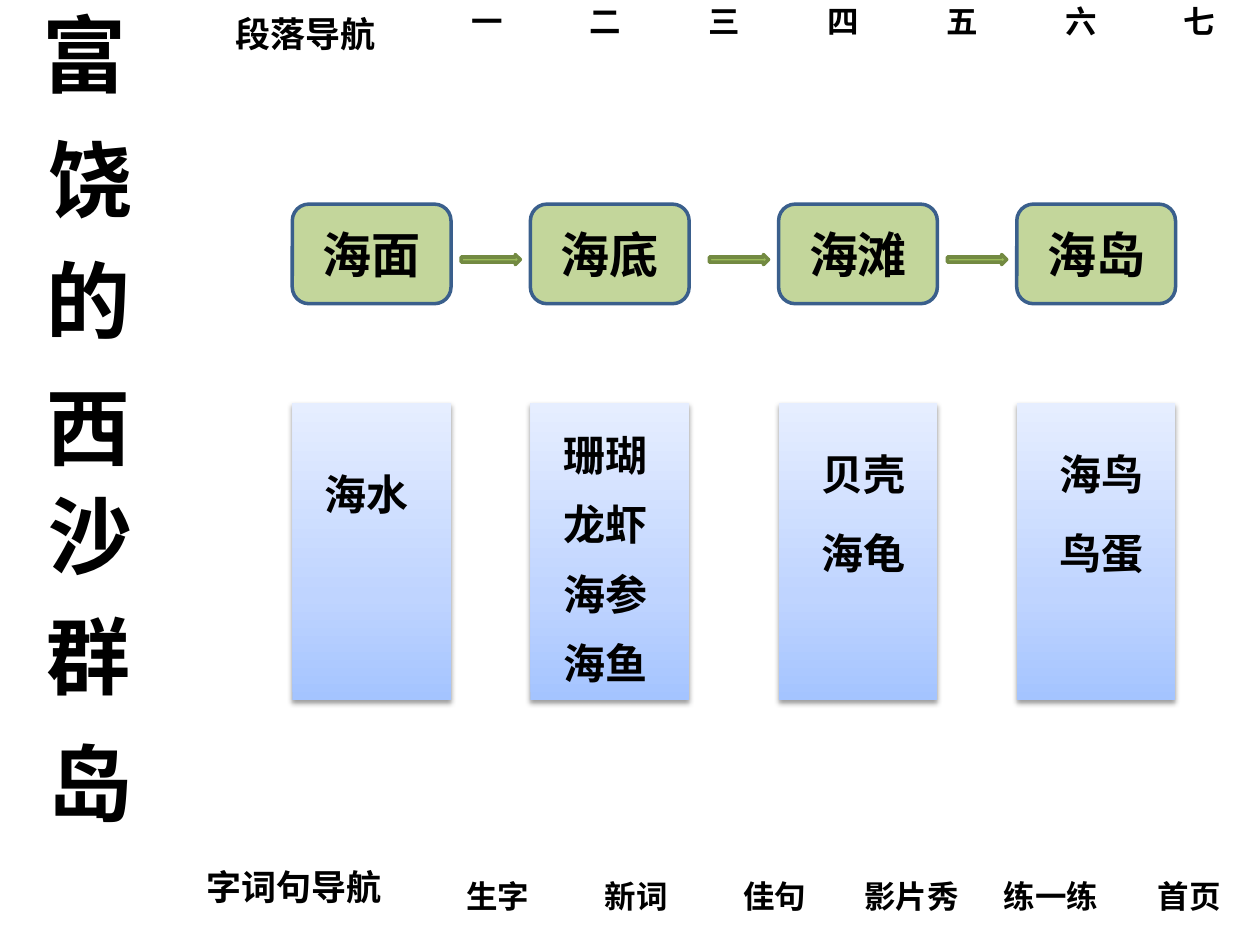
from lxml.etree import SubElement
from pptx import Presentation
from pptx.dml.color import RGBColor
from pptx.enum.shapes import MSO_SHAPE
from pptx.enum.text import MSO_ANCHOR, MSO_AUTO_SIZE, PP_ALIGN
from pptx.oxml import parse_xml
from pptx.oxml.ns import nsdecls, qn
from pptx.util import Inches, Pt

COLORS = {
    "text": "000000", "card": "C3D69B", "card_line": "3A5F8C",
    "arrow": "9BBB59", "arrow_line": "738A42",
    "panel_low": "A4C4FF", "panel_middle": "BFD4FF", "panel_high": "E6EEFF",
}
PANEL_STOPS = ((0, "panel_low"), (35, "panel_middle"), (100, "panel_high"))
FONT = "Noto Sans CJK SC"
COLUMNS, ROWS = 100, 75


def write_text(frame, text, size=18, align=PP_ALIGN.LEFT, anchor=MSO_ANCHOR.TOP):
    frame.vertical_anchor = anchor
    paragraph = frame.paragraphs[0]
    paragraph.alignment = align
    run = paragraph.add_run()
    run.text = text
    run.font.size = Pt(size)
    run.font.bold = True
    run.font.name = FONT
    run.font.color.rgb = RGBColor.from_string(COLORS["text"])
    SubElement(run.font._element, qn("a:ea")).set("typeface", FONT)


class SlideBuilder:
    """Draw the elements of a slide on a grid of columns and rows."""

    def __init__(self, presentation):
        self.slide = presentation.slides.add_slide(presentation.slide_layouts[6])
        self.column = presentation.slide_width / COLUMNS
        self.row = presentation.slide_height / ROWS

    def place(self, left, top, width, height):
        return (round(left * self.column), round(top * self.row),
                round(width * self.column), round(height * self.row))

    def label(self, text, left, top, size=18):
        width = len(text) * size / 7.2 + 2.1
        height = size / 6 + 1
        box = self.slide.shapes.add_textbox(*self.place(left, top, width, height))
        box.text_frame.word_wrap = False
        box.text_frame.auto_size = MSO_AUTO_SIZE.SHAPE_TO_FIT_TEXT
        write_text(box.text_frame, text, size=size)

    def filled_shape(self, kind, area, fill, line):
        shape = self.slide.shapes.add_shape(kind, *self.place(*area))
        shape.shadow.inherit = False
        shape.fill.solid()
        shape.fill.fore_color.rgb = RGBColor.from_string(COLORS[fill])
        shape.line.color.rgb = RGBColor.from_string(COLORS[line])
        shape.line.width = Pt(2)
        return shape

    def card(self, text, left):
        shape = self.filled_shape(MSO_SHAPE.ROUNDED_RECTANGLE,
                                  (left, 16.2, 12.6, 7.9), "card", "card_line")
        write_text(shape.text_frame, text, size=28,
                   align=PP_ALIGN.CENTER, anchor=MSO_ANCHOR.MIDDLE)

    def arrow(self, left):
        self.filled_shape(MSO_SHAPE.RIGHT_ARROW, (left, 20.2, 4.7, 0.8),
                          "arrow", "arrow_line")

    def panel(self, left):
        shape = self.slide.shapes.add_shape(
            MSO_SHAPE.RECTANGLE, *self.place(left, 32, 12.6, 23.6))
        shape.line.fill.background()
        stops = "".join(
            f'<a:gs pos="{position * 1000}"><a:srgbClr val="{COLORS[color]}"/></a:gs>'
            for position, color in PANEL_STOPS)
        gradient = parse_xml(
            f'<a:gradFill {nsdecls("a")} rotWithShape="1"><a:gsLst>{stops}</a:gsLst>'
            '<a:lin ang="16200000" scaled="0"/></a:gradFill>')
        shadow = parse_xml(
            f'<a:effectLst {nsdecls("a")}><a:outerShdw blurRad="{Pt(3.1)}" '
            f'dist="{Pt(1.6)}" dir="5400000" rotWithShape="0">'
            '<a:srgbClr val="000000"><a:alpha val="38000"/></a:srgbClr>'
            '</a:outerShdw></a:effectLst>')
        properties = shape._element.spPr
        properties.find(qn("a:prstGeom")).addnext(gradient)
        properties.find(qn("a:ln")).addnext(shadow)


def main():
    presentation = Presentation()
    presentation.slide_width = Inches(10)
    presentation.slide_height = Inches(7.5)
    builder = SlideBuilder(presentation)

    for index, numeral in enumerate("一二三四五六七"):
        builder.label(numeral, 36.4 + 9.43 * index, -0.3)

    title_places = ((2.4, -0.3), (2.9, 9.6), (2.7, 19.2), (2.7, 29.3),
                    (2.9, 37.9), (2.7, 47.5), (2.9, 57.6))
    for character, (left, top) in zip("富饶的西沙群岛", title_places):
        builder.label(character, left, top, size=48)

    footer = {"生字": 36, "新词": 47, "佳句": 58, "影片秀": 67.6,
              "练一练": 78.7, "首页": 90.9}
    for text, left in footer.items():
        builder.label(text, left, 69.1)
    builder.label("段落导航", 17.7, 0.5, size=20)
    builder.label("字词句导航", 15.4, 68.2, size=20)

    places = (
        ("海面", 23.2, 1.6, ("海水",)),
        ("海底", 42.1, 1.6, ("珊瑚", "龙虾", "海参", "海鱼")),
        ("海滩", 61.8, 2.4, ("贝壳", "海龟")),
        ("海岛", 80.7, 2.4, ("海鸟", "鸟蛋")),
    )
    word_rows = {1: (36.7, 0), 2: (35.1, 6.3), 4: (33.6, 5.5)}
    for index, (name, left, indent, words) in enumerate(places):
        builder.card(name, left)
        if index:
            builder.arrow(left - 5.5)
        builder.panel(left)
        top, step = word_rows[len(words)]
        for number, word in enumerate(words):
            builder.label(word, left + indent, top + step * number, size=24)

    presentation.save("out.pptx")


if __name__ == "__main__":
    main()
